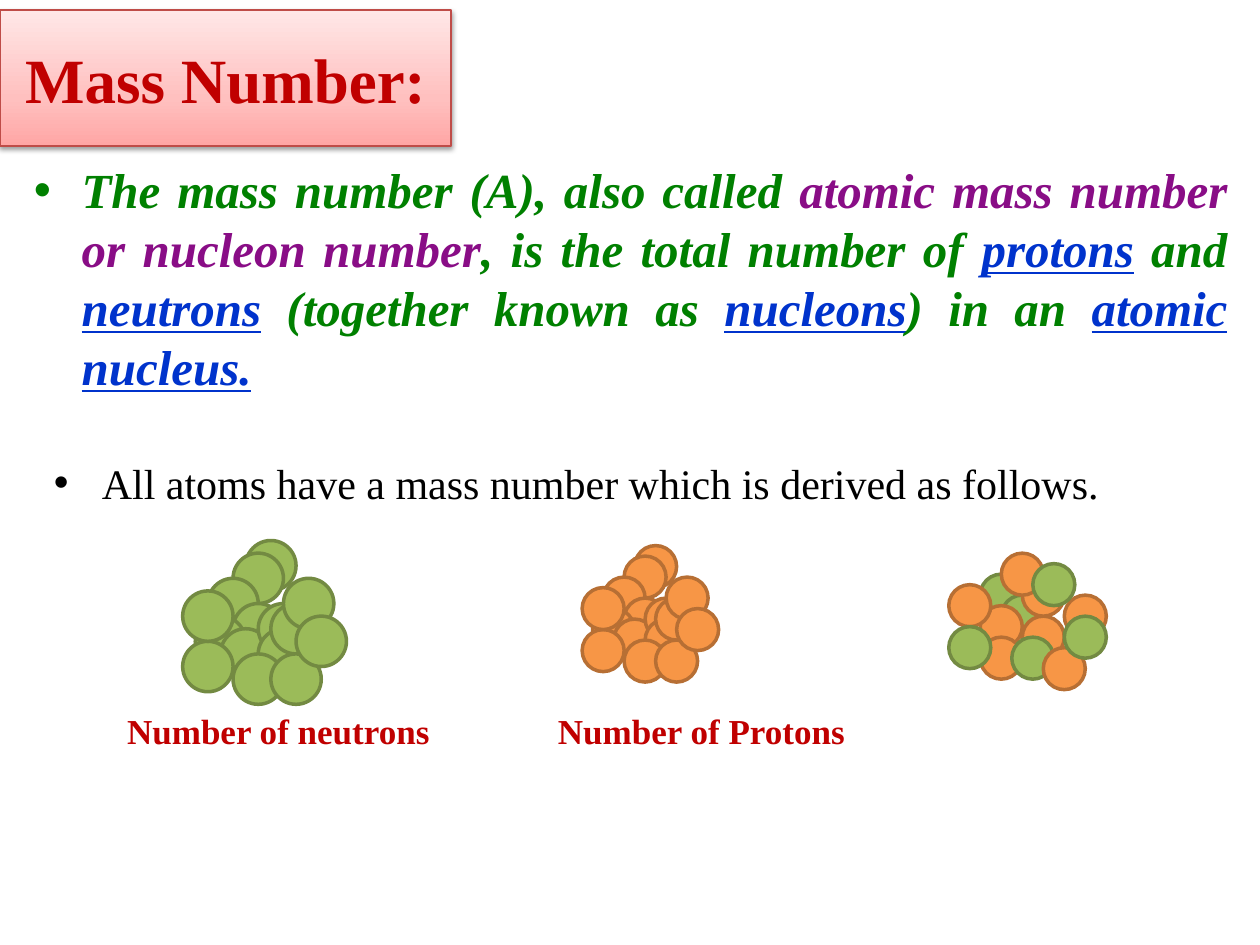
"""Build the "Mass Number" slide with its definition and three clusters of nucleons."""
from dataclasses import dataclass

from pptx import Presentation
from pptx.dml.color import RGBColor
from pptx.enum.shapes import MSO_SHAPE as Shape
from pptx.enum.text import MSO_ANCHOR as Anchor, MSO_AUTO_SIZE as AutoSize, PP_ALIGN as Align
from pptx.oxml import parse_xml
from pptx.oxml.ns import nsdecls, qn
from pptx.util import Inches, Pt


@dataclass(frozen=True)
class Theme:
    font: str = "Times New Roman"
    red: str = "C00000"
    green: str = "008000"
    purple: str = "890D86"
    blue: str = "0033CC"
    black: str = "000000"
    title_line: str = "BF4C48"
    title_stops: tuple = ((0, "FFA6A5"), (35, "FFC0BF"), (100, "FFE7E7"))
    title_size: int = 36
    definition_size: int = 28
    note_size: int = 24
    caption_size: int = 20


THEME = Theme()
TITLE = "Mass Number:"
DEFINITION = [
    ("The mass number (A), also called ", "green"),
    ("atomic mass number or nucleon number", "purple"),
    (", is the total number of ", "green"),
    ("protons", "blue"),
    (" and ", "green"),
    ("neutrons", "blue"),
    (" (together known as ", "green"),
    ("nucleons", "blue"),
    (") in an ", "green"),
    ("atomic nucleus.", "blue"),
]
NOTE = [("All atoms have a mass number which is derived as follows.", "black")]
CAPTIONS = [("Number of neutrons", 0.91, 2.62), ("Number of Protons", 4.33, 2.5)]
CAPTION_TOP, CAPTION_HEIGHT = 5.58, 0.44

NUCLEONS = {"n": ("9BBB59", "738A42"), "p": ("F79646", "B76F34")}
CELLS_PER_BALL = 4
PILE = [(5, 0), (4, 1), (2, 3), (4, 5), (1, 6), (3, 7), (6, 5), (6, 7),
        (7, 5), (8, 3), (4, 9), (7, 9), (9, 6), (0, 8), (0, 4)]
MIXED_PILE = [(3, 2), (5, 4), (7, 6), (3, 5), (7, 2), (3, 8), (11, 4),
              (6, 8), (9, 9), (5, 0), (8, 1), (0, 3), (0, 7), (11, 6)]
CLUSTERS = [
    (1.45, 4.29, 0.4, PILE, "n" * len(PILE)),
    (4.62, 4.33, 1 / 3, PILE, "p" * len(PILE)),
    (7.53, 4.39, 1 / 3, MIXED_PILE, "nnpppppnppnpnn"),
]


def rgb(value):
    return RGBColor.from_string(value)


def place(shape, left, top, width, height):
    shape.left, shape.top = Inches(left), Inches(top)
    shape.width, shape.height = Inches(width), Inches(height)


def style(paragraph, size, color, bold=False, italic=False):
    font = paragraph.font
    font.name, font.size, font.bold, font.italic = THEME.font, Pt(size), bold, italic
    font.color.rgb = rgb(color)


def add_title(slide):
    title = slide.shapes.title
    place(title, 0, 0.08, 3.58, 1.08)
    title.fill.gradient()
    title.fill.gradient_angle = 90
    stops = title.fill._fill._gradFill.find(qn("a:gsLst"))
    stops.clear()
    for position, color in THEME.title_stops:
        stops.append(parse_xml(
            f'<a:gs {nsdecls("a")} pos="{position * 1000}"><a:srgbClr val="{color}"/></a:gs>'))
    title.line.color.rgb = rgb(THEME.title_line)
    title.line.width = Pt(0.75)
    title.shadow.inherit = False
    title._element.spPr.find(qn("a:effectLst")).append(parse_xml(
        f'<a:outerShdw {nsdecls("a")} blurRad="{Pt(3.1)}" dist="{Pt(1.6)}" dir="5400000" '
        'rotWithShape="0"><a:srgbClr val="000000"><a:alpha val="38000"/></a:srgbClr></a:outerShdw>'))
    frame = title.text_frame
    frame.text = TITLE
    frame.vertical_anchor = Anchor.MIDDLE
    frame.paragraphs[0].alignment = Align.CENTER
    style(frame.paragraphs[0], THEME.title_size, THEME.red, bold=True)


def add_bullet(slide, box, runs, size, align, emphasis=False):
    frame = slide.shapes.add_textbox(*map(Inches, box)).text_frame
    frame.word_wrap = True
    paragraph = frame.paragraphs[0]
    paragraph.alignment = align
    paragraph.space_before = Pt(size * 0.2)
    properties = paragraph._p.get_or_add_pPr()
    properties.set("marL", str(Inches(0.38)))
    properties.set("indent", str(-Inches(0.38)))
    properties.append(parse_xml(f'<a:buFont {nsdecls("a")} typeface="Arial"/>'))
    properties.append(parse_xml(f'<a:buChar {nsdecls("a")} char="•"/>'))
    style(paragraph, size, getattr(THEME, runs[0][1]), emphasis, emphasis)
    for text, color in runs:
        run = paragraph.add_run()
        run.text = text
        run.font.color.rgb = rgb(getattr(THEME, color))
        run.font.underline = color == "blue"


def add_caption(slide, text, left, width):
    box = map(Inches, (left, CAPTION_TOP, width, CAPTION_HEIGHT))
    frame = slide.shapes.add_textbox(*box).text_frame
    frame.word_wrap = False
    frame.auto_size = AutoSize.SHAPE_TO_FIT_TEXT
    frame.text = text
    style(frame.paragraphs[0], THEME.caption_size, THEME.red, bold=True)


def add_cluster(slide, left, top, diameter, cells, kinds):
    group = slide.shapes.add_group_shape()
    step = diameter / CELLS_PER_BALL
    for (column, row), kind in zip(cells, kinds):
        box = (left + column * step, top + row * step, diameter, diameter)
        ball = group.shapes.add_shape(Shape.OVAL, *map(Inches, box))
        fill, outline = NUCLEONS[kind]
        ball.fill.solid()
        ball.fill.fore_color.rgb = rgb(fill)
        ball.line.color.rgb = rgb(outline)
        ball.line.width = Pt(2)
        ball.shadow.inherit = False


def main():
    presentation = Presentation()
    presentation.slide_width, presentation.slide_height = Inches(10), Inches(7.5)
    slide = presentation.slides.add_slide(presentation.slide_layouts.get_by_name("Title Only"))
    add_title(slide)
    add_bullet(slide, (0.17, 1.22, 9.67, 2.05), DEFINITION,
               THEME.definition_size, Align.JUSTIFY, emphasis=True)
    add_bullet(slide, (0.33, 3.58, 9, 0.59), NOTE, THEME.note_size, Align.LEFT)
    for cluster in CLUSTERS:
        add_cluster(slide, *cluster)
    for caption in CAPTIONS:
        add_caption(slide, *caption)
    presentation.save("out.pptx")


if __name__ == "__main__":
    main()
